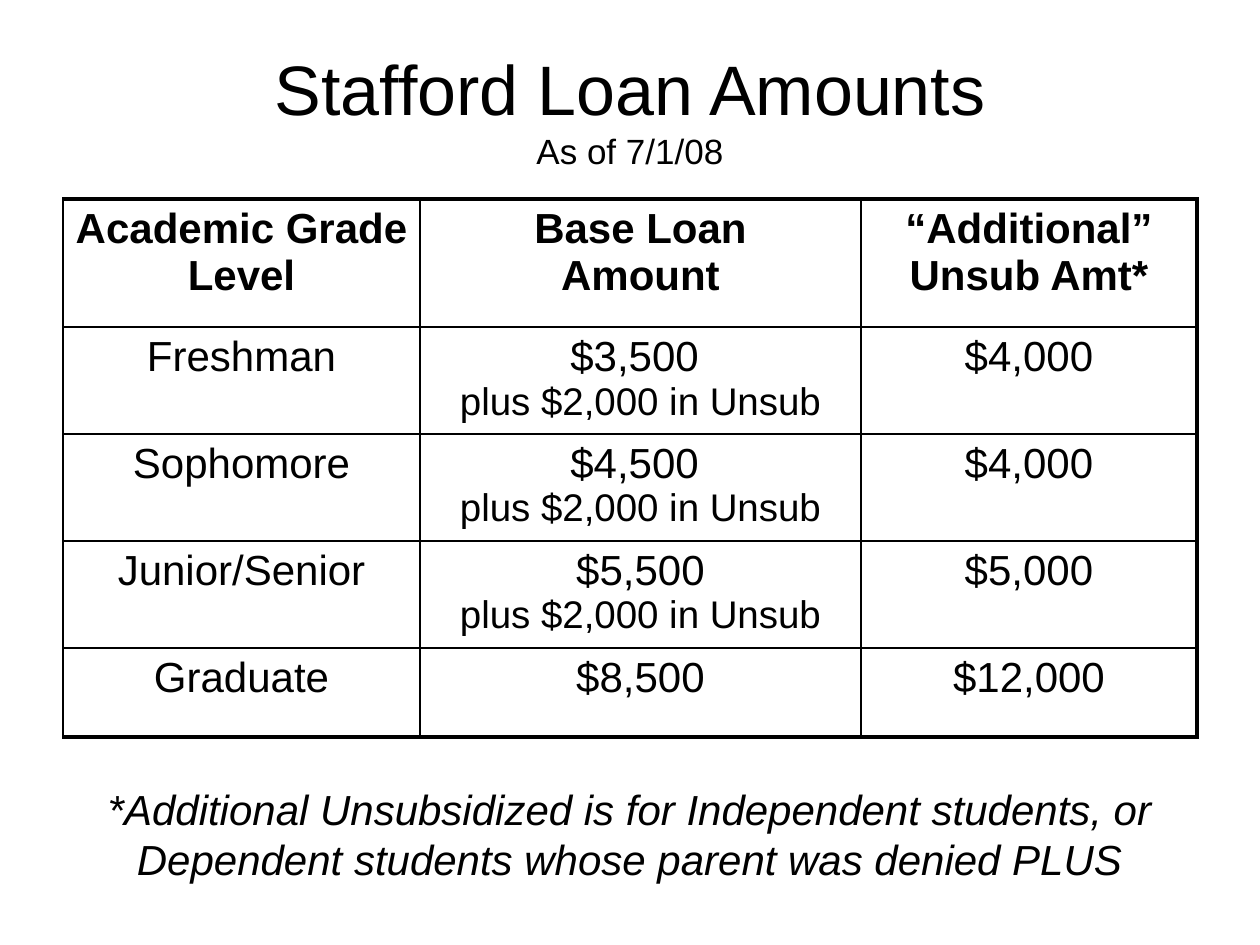
"""Build the Stafford loan amounts slide."""
from lxml import etree
from pptx import Presentation
from pptx.dml.color import RGBColor
from pptx.enum.text import MSO_ANCHOR, MSO_AUTO_SIZE, PP_ALIGN
from pptx.oxml.ns import qn
from pptx.util import Emu, Pt

CENTER = PP_ALIGN.CENTER
TOP, MIDDLE = MSO_ANCHOR.TOP, MSO_ANCHOR.MIDDLE
NO_FIT = MSO_AUTO_SIZE.NONE
PX_PER_INCH = 126
COLORS = {"ink": "000000", "paper": "FFFFFF"}
THIN, THICK = 1, 2.25
TITLE_ONLY = 5


def px(length):
    return Emu(round(length * 914400 / PX_PER_INCH))


class LoanSlide:
    def __init__(self, deck):
        self.font = "Arial"
        self.ink = RGBColor.from_string(COLORS["ink"])
        self.slide = deck.slides.add_slide(deck.slide_layouts[TITLE_ONLY])
        background = self.slide.background.fill
        background.solid()
        background.fore_color.rgb = RGBColor.from_string(COLORS["paper"])

    def set_lines(self, frame, lines, anchor=TOP, **emphasis):
        frame.word_wrap = True
        frame.vertical_anchor = anchor
        paragraph = frame.paragraphs[0]
        paragraph.alignment = CENTER
        for index, (words, size) in enumerate(lines):
            if index:
                paragraph.add_line_break()
            run = paragraph.add_run()
            run.text = words
            values = {"name": self.font, "size": Pt(size), "bold": False, **emphasis}
            for attribute, value in values.items():
                setattr(run.font, attribute, value)
            run.font.color.rgb = self.ink

    def title(self, box, lines):
        heading = self.slide.shapes.title
        heading.left, heading.top, heading.width, heading.height = map(px, box)
        heading.text_frame.auto_size = NO_FIT
        self.set_lines(heading.text_frame, lines, MIDDLE)

    def note(self, box, lines):
        footnote = self.slide.shapes.add_textbox(*map(px, box))
        self.set_lines(footnote.text_frame, lines, italic=True)

    def border(self, cell, widths):
        properties = cell._tc.get_or_add_tcPr()
        for side, width in widths.items():
            line = etree.SubElement(properties, qn(f"a:ln{side}"), w=str(Pt(width)))
            paint = etree.SubElement(line, qn("a:solidFill"))
            etree.SubElement(paint, qn("a:srgbClr"), val=COLORS["ink"])

    def table(self, left, top, widths, heights, rows):
        box = (left, top, sum(widths), sum(heights))
        frame = self.slide.shapes.add_table(len(rows), len(widths), *map(px, box))
        grid = frame.table
        grid.first_row = grid.horz_banding = False
        for column, width in zip(grid.columns, widths):
            column.width = px(width)
        last_row, last_column = len(rows) - 1, len(widths) - 1
        for r, (height, entries) in enumerate(zip(heights, rows)):
            grid.rows[r].height = px(height)
            for c, lines in enumerate(entries):
                cell = grid.cell(r, c)
                self.border(cell, {
                    "L": THIN,
                    "R": THICK if c == last_column else THIN,
                    "T": THICK if r == 0 else THIN,
                    "B": THICK if r == last_row else THIN,
                })
                cell.fill.background()
                self.set_lines(cell.text_frame, lines, bold=r == 0)


def main():
    deck = Presentation()
    deck.slide_width, deck.slide_height = px(1260), px(945)
    loans = LoanSlide(deck)
    loans.title((63, 38, 1134, 141), [("Stafford Loan Amounts", 40), ("As of 7/1/08", 20)])
    unsub = ("plus $2,000 in Unsub", 22)
    rows = [
        [[("Academic Grade Level", 24)],
         [("Base Loan", 24), ("Amount", 24)],
         [("“Additional” Unsub Amt*", 24)]],
        [[("Freshman", 24)], [("$3,500 ", 24), unsub], [("$4,000", 24)]],
        [[("Sophomore", 24)], [("$4,500 ", 24), unsub], [("$4,000", 24)]],
        [[("Junior/Senior", 24)], [("$5,500", 24), unsub], [("$5,000", 24)]],
        [[("Graduate", 24)], [("$8,500", 24)], [("$12,000", 24)]],
    ]
    loans.table(63, 199, (357, 441, 336), (128, 107, 107, 107, 89), rows)
    loans.note((73, 777, 1113, 115), [(
        "*Additional Unsubsidized is for Independent students, or "
        "Dependent students whose parent was denied PLUS", 24)])
    deck.save("out.pptx")


if __name__ == "__main__":
    main()
